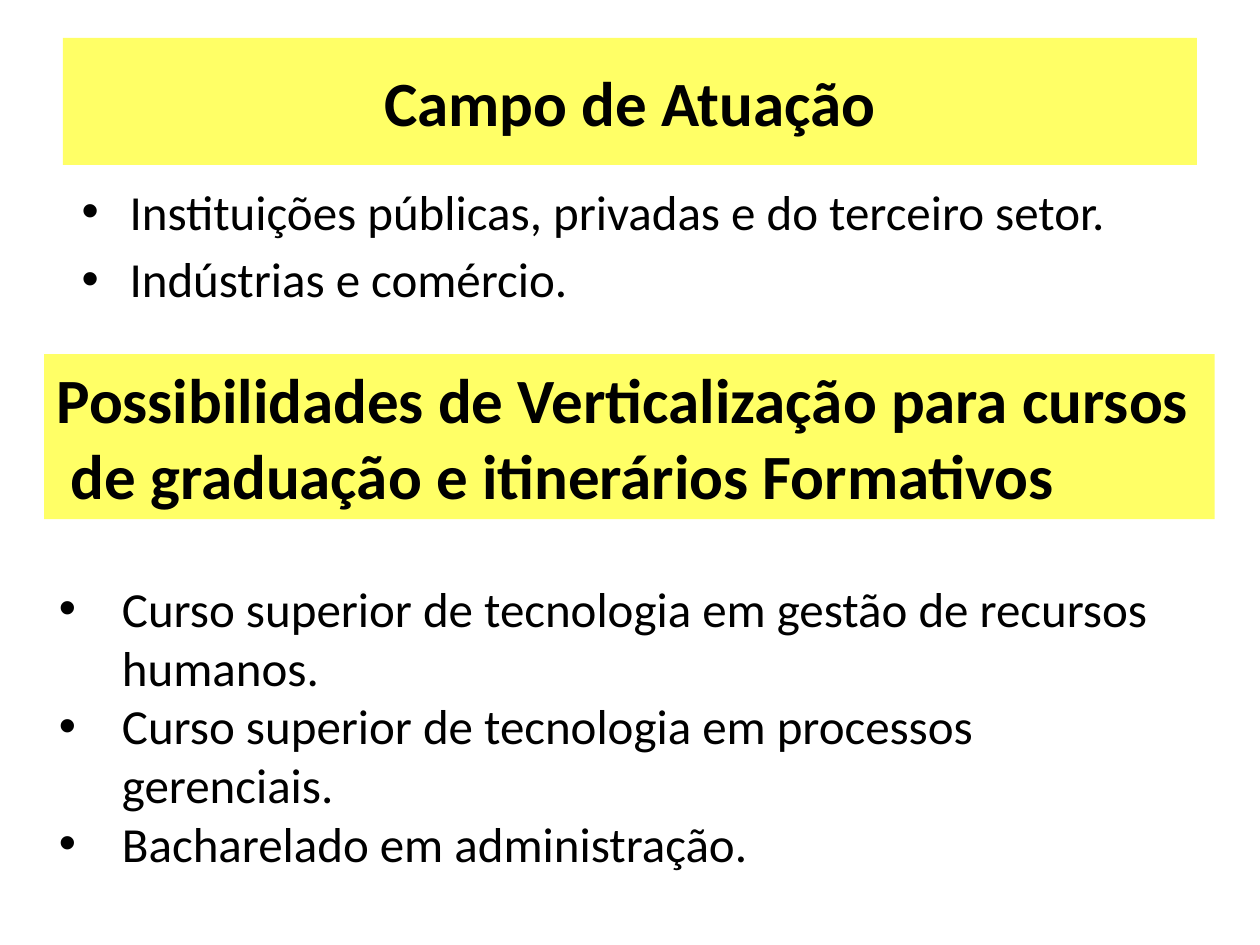
"""Build a slide on fields of work and further study options."""
from dataclasses import dataclass
from typing import Optional

from lxml.etree import SubElement
from pptx import Presentation
from pptx.dml.color import RGBColor
from pptx.enum.shapes import MSO_SHAPE as Shape
from pptx.enum.text import MSO_ANCHOR as Anchor, PP_ALIGN as Align
from pptx.oxml.ns import qn
from pptx.util import Inches, Pt

BLACK = RGBColor(0x00, 0x00, 0x00)
YELLOW = RGBColor(0xFF, 0xFF, 0x66)
FONT = "Calibri"


@dataclass
class Banner:
    box: tuple[float, float, float, float]
    lines: list[str]
    align: Align = Align.LEFT
    wrap: bool = True


@dataclass
class BulletList:
    box: tuple[float, float, float, float]
    items: list[str]
    indent: float
    space_before: float = 0


BANNERS = [
    Banner((0.5, 0.3, 9, 1.01), ["Campo de Atuação"], Align.CENTER),
    Banner(
        (0.35, 2.81, 9.29, 1.31),
        ["Possibilidades de Verticalização para cursos",
         " de graduação e itinerários Formativos"],
        wrap=False,
    ),
]
LISTS = [
    BulletList(
        (0.55, 1.39, 9, 1.26),
        ["Instituições públicas, privadas e do terceiro setor.",
         "Indústrias e comércio."],
        indent=0.38,
        space_before=5,
    ),
    BulletList(
        (0.37, 4.54, 8.9, 2.46),
        ["Curso superior de tecnologia em gestão de recursos humanos.",
         "Curso superior de tecnologia em processos gerenciais.",
         "Bacharelado em administração."],
        indent=0.5,
    ),
]


def add_bullet(p, indent: float) -> None:
    """Give a paragraph a hanging bullet."""
    pPr = p._p.get_or_add_pPr()
    pPr.set("marL", str(Inches(indent)))
    pPr.set("indent", str(-Inches(indent)))
    SubElement(pPr, qn("a:buFont")).set("typeface", "Arial")
    SubElement(pPr, qn("a:buChar")).set("char", "•")


def write_text(tf, lines: list[str], *, size: float, bold: bool = False,
               align: Align = Align.LEFT, wrap: bool = True,
               anchor: Anchor = Anchor.TOP, space_before: float = 0,
               indent: Optional[float] = None) -> None:
    """Write one paragraph per line in a shared format."""
    tf.word_wrap = wrap
    tf.vertical_anchor = anchor
    for i, line in enumerate(lines):
        p = tf.paragraphs[0] if i == 0 else tf.add_paragraph()
        p.alignment = align
        p.space_before = Pt(space_before)
        if indent is not None:
            add_bullet(p, indent)
        r = p.add_run()
        r.text = line
        r.font.name = FONT
        r.font.size = Pt(size)
        r.font.bold = bold
        r.font.color.rgb = BLACK


def add_banner(s, banner: Banner) -> None:
    """Draw a yellow heading band."""
    sp = s.shapes.add_shape(Shape.RECTANGLE, *map(Inches, banner.box))
    sp.shadow.inherit = False
    sp.fill.solid()
    sp.fill.fore_color.rgb = YELLOW
    sp.line.fill.background()
    write_text(sp.text_frame, banner.lines, size=36, bold=True,
               align=banner.align, wrap=banner.wrap, anchor=Anchor.MIDDLE)


def add_list(s, bullets: BulletList) -> None:
    """Draw a bulleted text box."""
    sp = s.shapes.add_textbox(*map(Inches, bullets.box))
    write_text(sp.text_frame, bullets.items, size=28, indent=bullets.indent,
               space_before=bullets.space_before)


def main() -> None:
    """Build and save the slide."""
    prs = Presentation()
    prs.slide_width, prs.slide_height = Inches(10), Inches(7.5)
    s = prs.slides.add_slide(prs.slide_layouts[6])
    for banner, bullets in zip(BANNERS, LISTS):
        add_banner(s, banner)
        add_list(s, bullets)
    prs.save("out.pptx")


if __name__ == "__main__":
    main()
